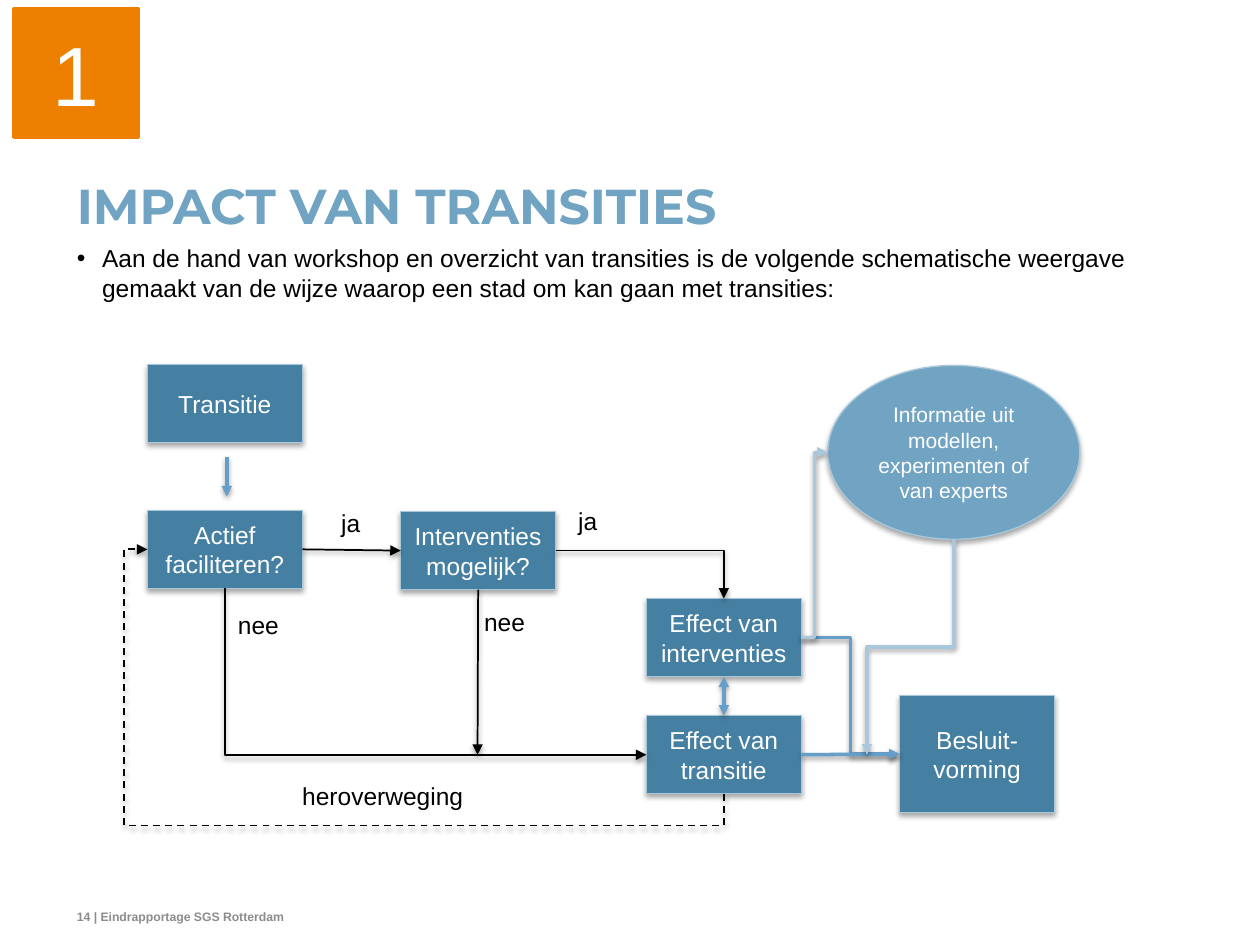
import lxml.etree
import pptx
import pptx.dml.color
import pptx.enum.dml
import pptx.enum.shapes
import pptx.enum.text
import pptx.oxml.ns
import pptx.util

Inches = pptx.util.Inches
Pt = pptx.util.Pt
qn = pptx.oxml.ns.qn
ALIGN = pptx.enum.text.PP_ALIGN
ANCHOR = pptx.enum.text.MSO_ANCHOR
SHAPE = pptx.enum.shapes.MSO_SHAPE
CONNECTOR = pptx.enum.shapes.MSO_CONNECTOR

BLACK, WHITE, GREY = "000000", "FFFFFF", "8C8C8C"
DEEP, MID, PALE, ARROW = "457FA2", "71A4C3", "AAC8DB", "649EC9"
ORANGE = "ED8000"
TOP, LEFT, BOTTOM, RIGHT = range(4)


def rgb(code):
    return pptx.dml.color.RGBColor.from_string(code)


def add_child(parent, tag, **attributes):
    child = lxml.etree.SubElement(parent, qn(tag))
    for key, value in attributes.items():
        child.set(key, str(value))
    return child


def write(frame, lines, size, color, align=ALIGN.LEFT, bold=False, font="Arial"):
    frame.word_wrap = True
    for index, line in enumerate(lines):
        paragraph = frame.add_paragraph() if index else frame.paragraphs[0]
        paragraph.alignment = align
        run = paragraph.add_run()
        run.text = line
        run.font.name, run.font.size, run.font.bold = font, Pt(size), bold
        run.font.color.rgb = rgb(color)


def clear_margins(frame):
    frame.margin_left = frame.margin_right = frame.margin_top = frame.margin_bottom = 0


def add_text(slide, box, text, size, color, align=ALIGN.LEFT, bold=False):
    frame = slide.shapes.add_textbox(*map(Inches, box)).text_frame
    write(frame, [text], size, color, align, bold)
    return frame


def cast_shadow(effects, alpha, distance):
    shadow = add_child(effects, "a:outerShdw", blurRad=Pt(3.1), dist=Pt(distance),
                       dir=5400000, rotWithShape=0)
    tint = add_child(shadow, "a:srgbClr", val=BLACK)
    add_child(tint, "a:alpha", val=alpha * 1000)


def add_block(slide, box, lines, fill, edge, edge_width, size, kind=SHAPE.RECTANGLE, shaded=True):
    block = slide.shapes.add_shape(kind, *map(Inches, box))
    block.fill.solid()
    block.fill.fore_color.rgb = rgb(fill)
    block.line.color.rgb = rgb(edge)
    block.line.width = Pt(edge_width)
    block.shadow.inherit = False
    if shaded:
        cast_shadow(block._element.spPr.find(qn("a:effectLst")), 35, 1.8)
    block.text_frame.vertical_anchor = ANCHOR.MIDDLE
    write(block.text_frame, lines, size, WHITE, ALIGN.CENTER)
    return block


def side(block, index):
    across, down = ((0.5, 0), (0, 0.5), (0.5, 1), (1, 0.5))[index]
    return int(block.left + across * block.width), int(block.top + down * block.height)


def style_line(line, color, width, dashed=False, both_ends=False):
    line.line.color.rgb = rgb(color)
    line.line.width = Pt(width)
    if dashed:
        line.line.dash_style = pptx.enum.dml.MSO_LINE.DASH
    stroke = line._element.spPr.find(qn("a:ln"))
    if both_ends:
        add_child(stroke, "a:headEnd", type="triangle")
    add_child(stroke, "a:tailEnd", type="triangle")
    cast_shadow(add_child(line._element.spPr, "a:effectLst"), 38, 1.6)


def add_arrow(slide, start, end, color, width, **style):
    arrow = slide.shapes.add_connector(CONNECTOR.STRAIGHT, *start, *end)
    style_line(arrow, color, width, **style)
    return arrow


def join(slide, source, source_side, target, target_side, color, width, **style):
    arrow = add_arrow(slide, side(source, source_side), side(target, target_side),
                      color, width, **style)
    arrow.begin_connect(source, source_side)
    arrow.end_connect(target, target_side)


def add_elbow(slide, start, end, color, width, bends=3, turn=0, adjust=(), **style):
    dx, dy = end[0] - start[0], end[1] - start[1]
    mid_x, mid_y = (start[0] + end[0]) / 2, (start[1] + end[1]) / 2
    dx, dy = {0: (dx, dy), 90: (dy, -dx), 270: (-dy, dx)}[turn]
    corners = (mid_x - dx / 2, mid_y - dy / 2, mid_x + dx / 2, mid_y + dy / 2)
    elbow = slide.shapes.add_connector(CONNECTOR.ELBOW, *map(int, corners))
    properties = elbow._element.spPr
    if turn:
        properties.find(qn("a:xfrm")).set("rot", str(turn * 60000))
    geometry = properties.find(qn("a:prstGeom"))
    geometry.set("prst", f"bentConnector{bends}")
    for number, share in enumerate(adjust, 1):
        add_child(geometry.find(qn("a:avLst")), "a:gd", name=f"adj{number}",
                  fmla=f"val {round(share * 100000)}")
    style_line(elbow, color, width, **style)


def add_title(slide, box):
    title = slide.shapes.title
    title.left, title.top, title.width, title.height = map(Inches, box)
    frame = title.text_frame
    clear_margins(frame)
    frame.auto_size = pptx.enum.text.MSO_AUTO_SIZE.NONE
    frame.vertical_anchor = ANCHOR.TOP
    write(frame, ["IMPACT VAN TRANSITIES"], 28, MID, bold=True, font="Montserrat")
    frame.paragraphs[0].line_spacing = Pt(28)


def add_intro(slide, box):
    frame = add_text(slide, box, "Aan de hand van workshop en overzicht van transities is de volgende "
                     "schematische weergave gemaakt van de wijze waarop een stad om kan gaan "
                     "met transities:", 14, BLACK)
    clear_margins(frame)
    properties = frame.paragraphs[0]._p.get_or_add_pPr()
    properties.set("marL", str(Inches(0.2)))
    properties.set("indent", str(-Inches(0.2)))
    add_child(properties, "a:buFont", typeface="Arial")
    add_child(properties, "a:buChar", char="•")


def add_flow(slide, box):
    left, top = box[:2]

    def step(x, y, *lines, height=0.62):
        return add_block(slide, (left + x, top + y, 1.23, height), lines, DEEP, PALE, 0.75, 14)

    def point(x, y):
        return Inches(left + x), Inches(top + y)

    step(0.2, 0, "Transitie")
    facilitate = step(0.2, 1.16, "Actief faciliteren?")
    intervene = step(2.21, 1.17, "Interventies", "mogelijk?")
    transition_effect = step(4.16, 2.79, "Effect van transitie")
    intervention_effect = step(4.16, 1.86, "Effect van interventies")
    decision = step(6.17, 2.63, "Besluit-vorming", height=0.93)
    information = add_block(slide, (left + 5.6, top + 0.01, 2, 1.38),
                            ["Informatie uit modellen, experimenten of van experts"],
                            MID, PALE, 0.75, 12, SHAPE.OVAL)

    add_arrow(slide, point(0.83, 0.74), point(0.83, 1.05), ARROW, 2)
    join(slide, facilitate, RIGHT, intervene, LEFT, BLACK, 1)
    add_elbow(slide, side(facilitate, BOTTOM), side(transition_effect, LEFT), BLACK, 1,
              bends=2, turn=270)
    refusal = add_arrow(slide, side(intervene, BOTTOM), point(2.82, 3.1), BLACK, 1)
    refusal.begin_connect(intervene, BOTTOM)
    add_elbow(slide, side(intervene, RIGHT), side(intervention_effect, TOP), BLACK, 1, bends=2)
    add_elbow(slide, side(transition_effect, BOTTOM), side(facilitate, LEFT), BLACK, 1,
              bends=4, turn=90, adjust=(-0.13, 1.04), dashed=True)
    add_elbow(slide, side(intervention_effect, RIGHT), side(decision, LEFT), ARROW, 2)
    join(slide, transition_effect, RIGHT, decision, LEFT, ARROW, 2)
    join(slide, transition_effect, TOP, intervention_effect, BOTTOM, ARROW, 2, both_ends=True)
    add_elbow(slide, side(intervention_effect, RIGHT), side(information, LEFT), PALE, 2)
    add_elbow(slide, side(information, BOTTOM), point(5.91, 3.1), PALE, 2, turn=90)

    for x, y, width, answer, align in (
            (1.64, 1.09, 0.57, "ja", ALIGN.LEFT), (3.38, 1.08, 0.63, "ja", ALIGN.CENTER),
            (0.82, 1.9, 0.63, "nee", ALIGN.LEFT), (2.72, 1.88, 0.63, "nee", ALIGN.CENTER),
            (1.33, 3.26, 1.81, "heroverweging", ALIGN.LEFT)):
        add_text(slide, (left + x, top + y, width, 0.34), answer, 14, BLACK, align)


def add_footer(slide, box):
    frame = add_text(slide, box, "14 | Eindrapportage SGS Rotterdam", 7, GREY, bold=True)
    clear_margins(frame)
    frame.word_wrap = False
    frame.vertical_anchor = ANCHOR.BOTTOM


def add_chapter_number(slide, box):
    add_block(slide, box, ["1"], ORANGE, ORANGE, 2, 48, shaded=False)


def main():
    deck = pptx.Presentation()
    deck.slide_width, deck.slide_height = Inches(10), Inches(7.5)
    slide = deck.slides.add_slide(deck.slide_layouts[5])
    add_title(slide, (0.61, 1.47, 8.81, 0.79))
    add_intro(slide, (0.61, 1.93, 8.81, 4.57))
    add_flow(slide, (0.97, 2.89, 7.6, 3.65))
    add_footer(slide, (0.61, 7.14, 4.72, 0.19))
    add_chapter_number(slide, (0.11, 0.07, 0.99, 1.02))
    deck.save("out.pptx")


if __name__ == "__main__":
    main()
